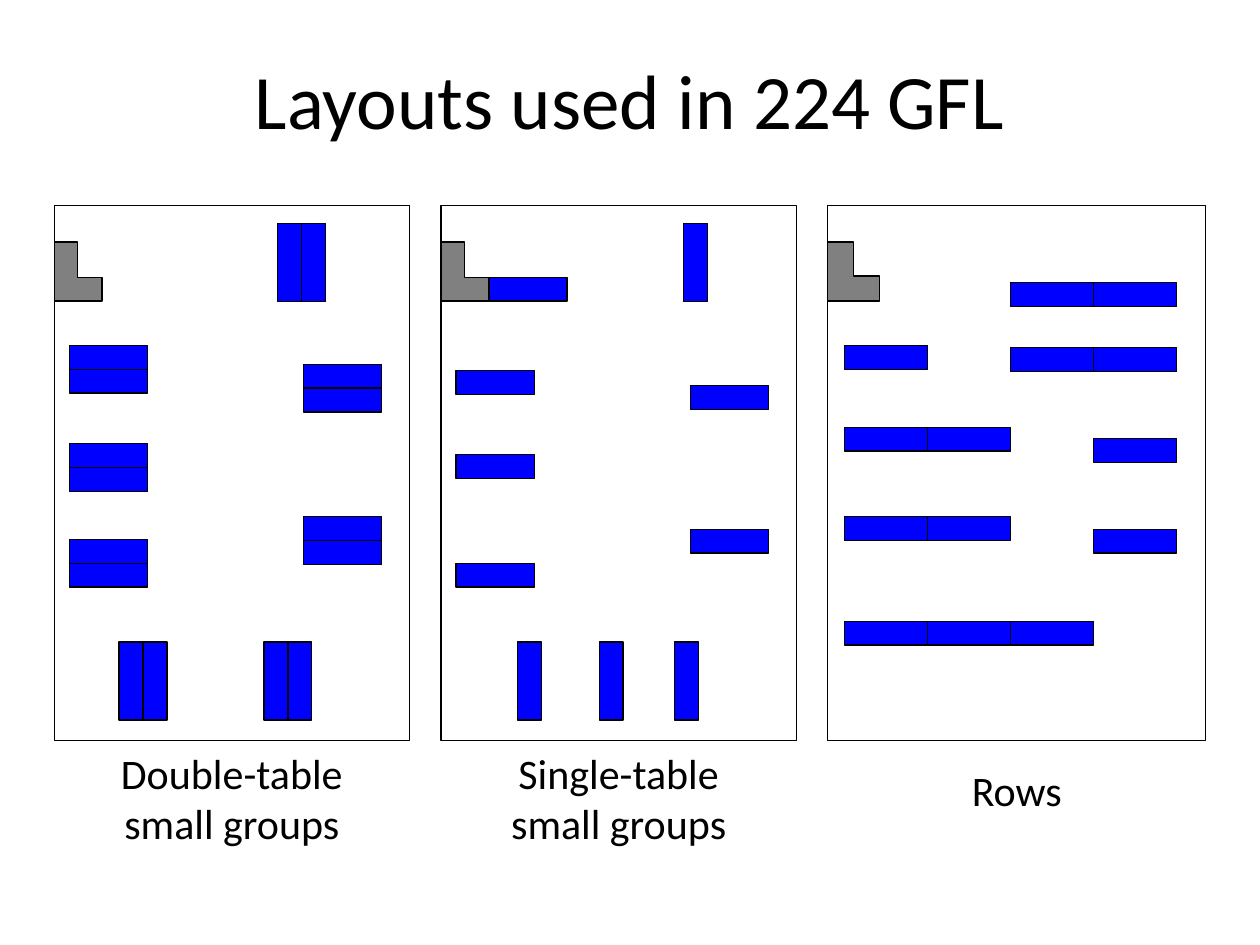
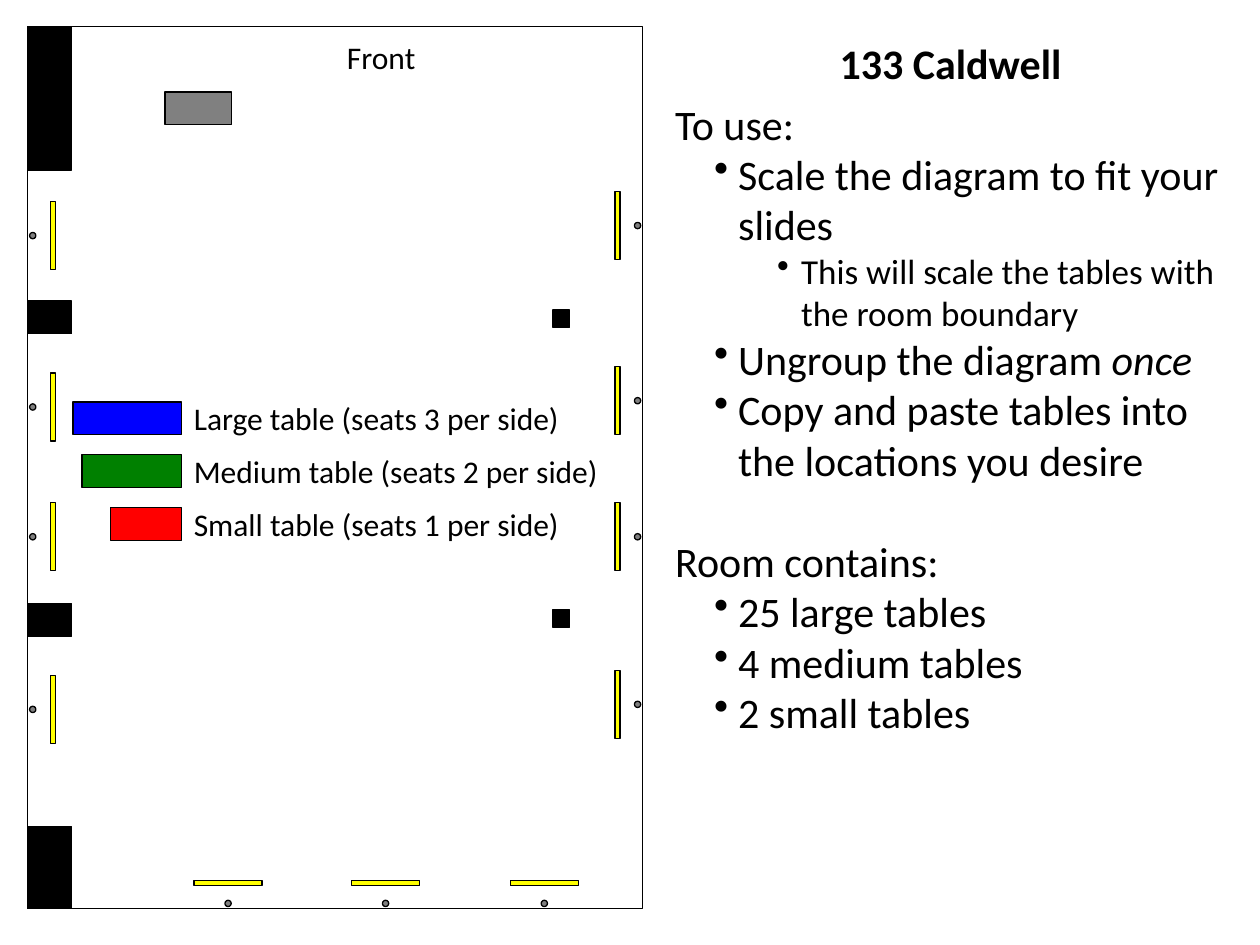
import collections

import lxml.etree
import pptx
import pptx.dml.color
import pptx.enum.shapes
import pptx.enum.text
import pptx.oxml.ns
import pptx.util

Inches = pptx.util.Inches
SHAPE = pptx.enum.shapes.MSO_SHAPE
ALIGN = pptx.enum.text.PP_ALIGN
Box = collections.namedtuple("Box", "left top width height")

COLORS = {
    "ink": "000000",
    "large": "0000FF",
    "medium": "008000",
    "small": "FF0000",
    "desk": "808080",
    "lamp": "7F7F7F",
    "board": "FFFF00",
}
FONT = "Calibri"
LINE_WIDTH = 0.75
TABLE_DEPTH = 0.19


def rgb(name):
    """Return the named colour."""
    return pptx.dml.color.RGBColor.from_string(COLORS[name])


def inside(room, left, top, width, height):
    """Return a box whose corner is measured from the corner of the room."""
    return Box(room.left + left, room.top + top, width, height)


def add_block(shapes, box, fill=None, kind=SHAPE.RECTANGLE, turn=0):
    """Draw a thinly outlined shape, filled if a colour is named."""
    block = shapes.add_shape(kind, *map(Inches, box))
    block.shadow.inherit = False
    block.rotation = turn
    block.line.color.rgb = rgb("ink")
    block.line.width = pptx.util.Pt(LINE_WIDTH)
    if fill:
        block.fill.solid()
        block.fill.fore_color.rgb = rgb(fill)
    else:
        block.fill.background()
    return block


def add_bullet(para, indent):
    """Give the paragraph a bullet that hangs left of its indent."""
    properties = para._p.get_or_add_pPr()
    properties.set("marL", str(Inches(indent)))
    properties.set("indent", str(Inches(-0.19)))
    bullet = lxml.etree.SubElement(properties, pptx.oxml.ns.qn("a:buChar"))
    bullet.set("char", "•")


def add_text(shapes, box, *lines, size=24, bold=False, align=ALIGN.LEFT, middle=False):
    """Add a text box; a line is a string or a dict with its own format."""
    label = shapes.add_textbox(*map(Inches, box))
    frame = label.text_frame
    frame.word_wrap = True
    if middle:
        frame.vertical_anchor = pptx.enum.text.MSO_ANCHOR.MIDDLE
    else:
        frame.auto_size = pptx.enum.text.MSO_AUTO_SIZE.SHAPE_TO_FIT_TEXT
    for number, line in enumerate(lines):
        line = line if isinstance(line, dict) else {"text": line}
        para = frame.paragraphs[0] if number == 0 else frame.add_paragraph()
        para.alignment = align
        para.level = line.get("level", 0)
        if "before" in line:
            para.space_before = pptx.util.Pt(line["before"])
        if "indent" in line:
            add_bullet(para, line["indent"])
        for text, italic in ((line["text"], False), (line.get("stress"), True)):
            if text:
                span = para.add_run()
                span.text = text
                span.font.name = FONT
                span.font.size = pptx.util.Pt(line.get("size", size))
                span.font.bold = bold
                span.font.italic = italic
                span.font.color.rgb = rgb("ink")


def add_layout(page, room, desk_width, table_width, flat, upright):
    """Draw one room with its corner desk, flat tables and upright tables."""
    shapes = page.shapes.add_group_shape().shapes
    add_block(shapes, room)
    desk_box = inside(room, 0, 0.29, desk_width, 0.47)
    desk = add_block(shapes, desk_box, "desk", SHAPE.CORNER)
    desk.adjustments[0], desk.adjustments[1] = 0.485, 0.491
    for turn, corners in ((0, flat), (90, upright)):
        for left, top in corners:
            table = inside(room, left, top, table_width, TABLE_DEPTH)
            add_block(shapes, table, "large", turn=turn)


def build_layouts_slide(page):
    """Show three ways to set out the tables of one room."""
    double_room, single_room = (Box(left, 1.63, 2.82, 4.25) for left in (0.43, 3.5))
    rows_room = Box(6.57, 1.63, 3, 4.25)

    flat_pairs = [(0.12, 1.11), (0.12, 1.89), (0.12, 2.65), (1.98, 1.26), (1.98, 2.47)]
    upright_pairs = [(0.3, 3.68), (1.45, 3.68), (1.56, 0.36)]
    steps = (0, TABLE_DEPTH)
    add_layout(
        page, double_room, 0.38, 0.62,
        flat=[(left, top + step) for left, top in flat_pairs for step in steps],
        upright=[(left + step, top) for left, top in upright_pairs for step in steps],
    )
    add_layout(
        page, single_room, 0.38, 0.62,
        flat=[(0.12, 1.31), (0.12, 1.98), (0.12, 2.84),
              (1.98, 1.43), (1.98, 2.57), (0.38, 0.57)],
        upright=[(0.39, 3.68), (1.04, 3.68), (1.64, 3.68), (1.71, 0.36)],
    )
    columns_by_row = {
        0.61: (2, 3), 1.11: (0,), 1.13: (2, 3), 1.76: (0, 1),
        1.85: (3,), 2.47: (0, 1), 2.57: (3,), 3.3: (0, 1, 2),
    }
    seat_width = 0.66
    add_layout(
        page, rows_room, 0.41, seat_width,
        flat=[(0.13 + column * seat_width, top)
              for top, columns in columns_by_row.items() for column in columns],
        upright=[],
    )

    captions = (
        (double_room, 0, 0.91, ["Double-table", "small groups"]),
        (single_room, 0, 0.91, ["Single-table", "small groups"]),
        (rows_room, 0.14, 0.5, ["Rows"]),
    )
    for room, gap, height, lines in captions:
        caption = inside(room, 0, room.height + gap, room.width, height)
        add_text(page.shapes, caption, *lines, align=ALIGN.CENTER)
    add_text(page.shapes, Box(0.5, 0.16, 9, 1.25), "Layouts used in 224 GFL",
             size=44, align=ALIGN.CENTER, middle=True)


def add_board(shapes, room, wall, along):
    """Draw a board and its lamp at a distance along one wall."""
    board_length, board_depth, lamp_size = 0.54, 0.04, 0.05
    parts = (
        (0.2, board_length, board_depth, "board", SHAPE.RECTANGLE),
        (0.04, lamp_size, lamp_size, "lamp", SHAPE.OVAL),
    )
    for inset, width, height, fill, kind in parts:
        middle_x, middle_y, turn = {
            "left": (inset, along, 270),
            "right": (room.width - inset, along, 90),
            "back": (along, room.height - inset, 180),
        }[wall]
        box = inside(room, middle_x - width / 2, middle_y - height / 2, width, height)
        add_block(shapes, box, fill, kind, turn)


def add_legend(shapes, box):
    """Explain the table sizes, one row each, right-aligned to their labels."""
    rows = (
        ("large", 0.86, 3.26, "Large table (seats 3 per side)"),
        ("medium", 0.79, 3.47, "Medium table (seats 2 per side)"),
        ("small", 0.56, 3.26, "Small table (seats 1 per side)"),
    )
    for number, (fill, width, label_width, label) in enumerate(rows):
        top = number * 0.42
        table = inside(box, box.width - width, top + 0.07, width, 0.26)
        add_block(shapes, table, fill)
        add_text(shapes, inside(box, box.width, top, label_width, 0.4), label, size=18)


def add_room_plan(page, room):
    """Draw the empty room with its walls, pillars, boards and legend."""
    shapes = page.shapes.add_group_shape().shapes
    add_block(shapes, room)
    add_legend(shapes, inside(room, 0.36, 2.91, 0.86, 1.24))
    add_text(shapes, inside(room, 1.86, 0.04, 1.89, 0.4), "Front",
             size=18, align=ALIGN.CENTER)
    boards = {
        "left": (1.66, 3.02, 4.05, 5.42),
        "right": (1.58, 2.97, 4.05, 5.38),
        "back": (1.59, 2.84, 4.1),
    }
    for wall, places in boards.items():
        for along in places:
            add_board(shapes, room, wall, along)
    add_block(shapes, inside(room, 1.09, 0.52, 0.53, 0.26), "desk")
    for top in (2.25, 4.63):
        add_block(shapes, inside(room, 4.17, top, 0.13, 0.14), "ink")
    for top, height in ((0, 1.14), (2.18, 0.26), (4.58, 0.26), (6.35, 0.65)):
        add_block(shapes, inside(room, 0, top, 0.35, height), "ink")


def add_instructions(page, box):
    """Write the heading, the steps and the list of tables."""
    add_text(page.shapes, box._replace(height=0.5), "133 Caldwell",
             bold=True, align=ALIGN.CENTER)
    add_text(
        page.shapes, inside(box, 0, 0.48, box.width, 5.35),
        "To use:",
        {"text": "Scale the diagram to fit your slides", "indent": 0.5},
        {"text": "This will scale the tables with the room boundary",
         "indent": 1, "level": 1, "size": 20},
        {"text": "Ungroup the diagram ", "stress": "once", "indent": 0.5},
        {"text": "Copy and paste tables into the locations you desire", "indent": 0.5},
        {"text": "Room contains:", "before": 29},
        *({"text": text, "indent": 0.5}
          for text in ("25 large tables", "4 medium tables", "2 small tables")),
    )


def build_room_slide(page):
    """Show the room plan beside the instructions."""
    add_instructions(page, Box(5.26, 0.25, 4.57, 5.83))
    add_room_plan(page, Box(0.22, 0.21, 4.88, 7))


def main():
    """Build and save the deck."""
    deck = pptx.Presentation()
    deck.slide_width, deck.slide_height = Inches(10), Inches(7.5)
    for build in (build_layouts_slide, build_room_slide):
        build(deck.slides.add_slide(deck.slide_layouts[6]))
    deck.save("out.pptx")


if __name__ == "__main__":
    main()
